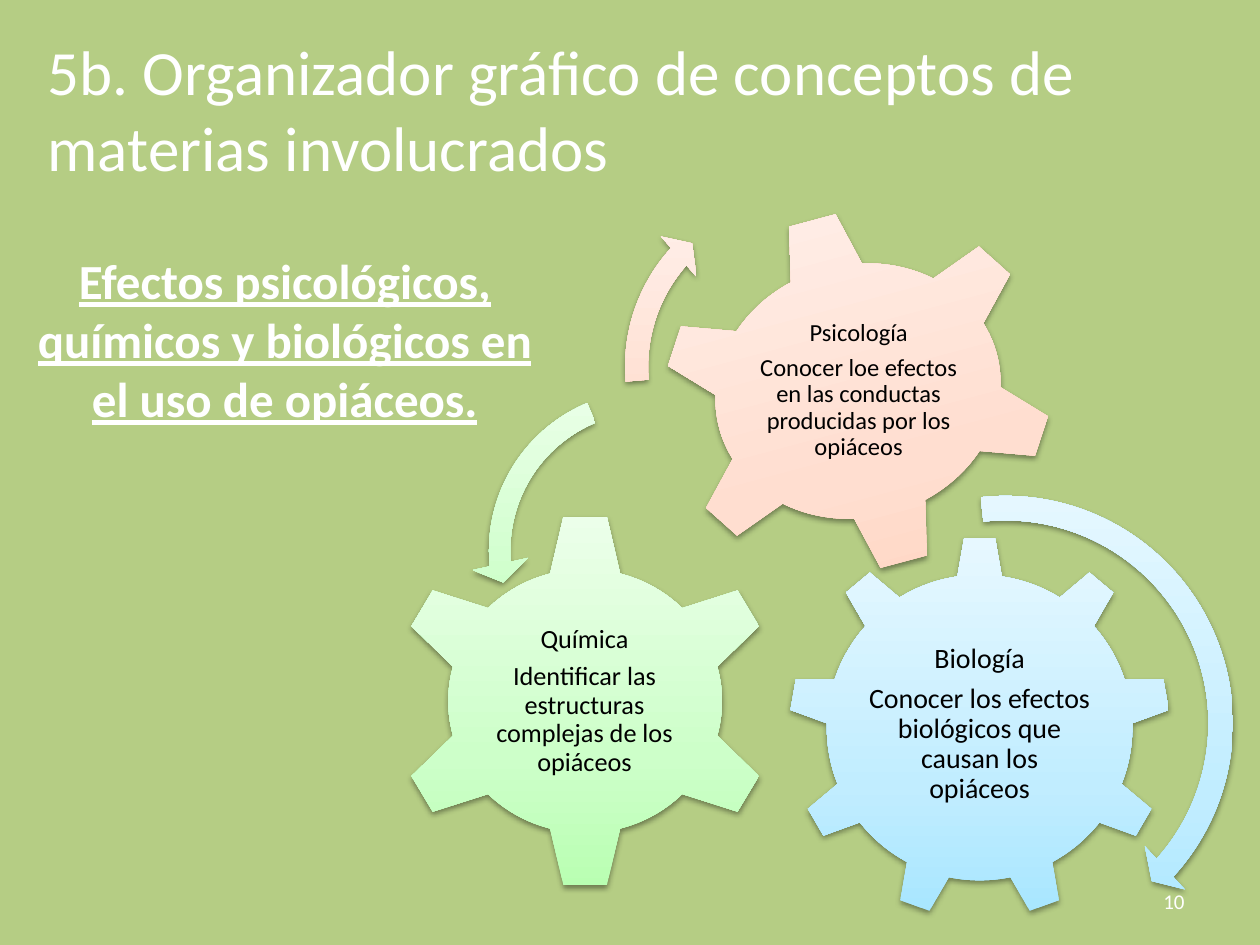
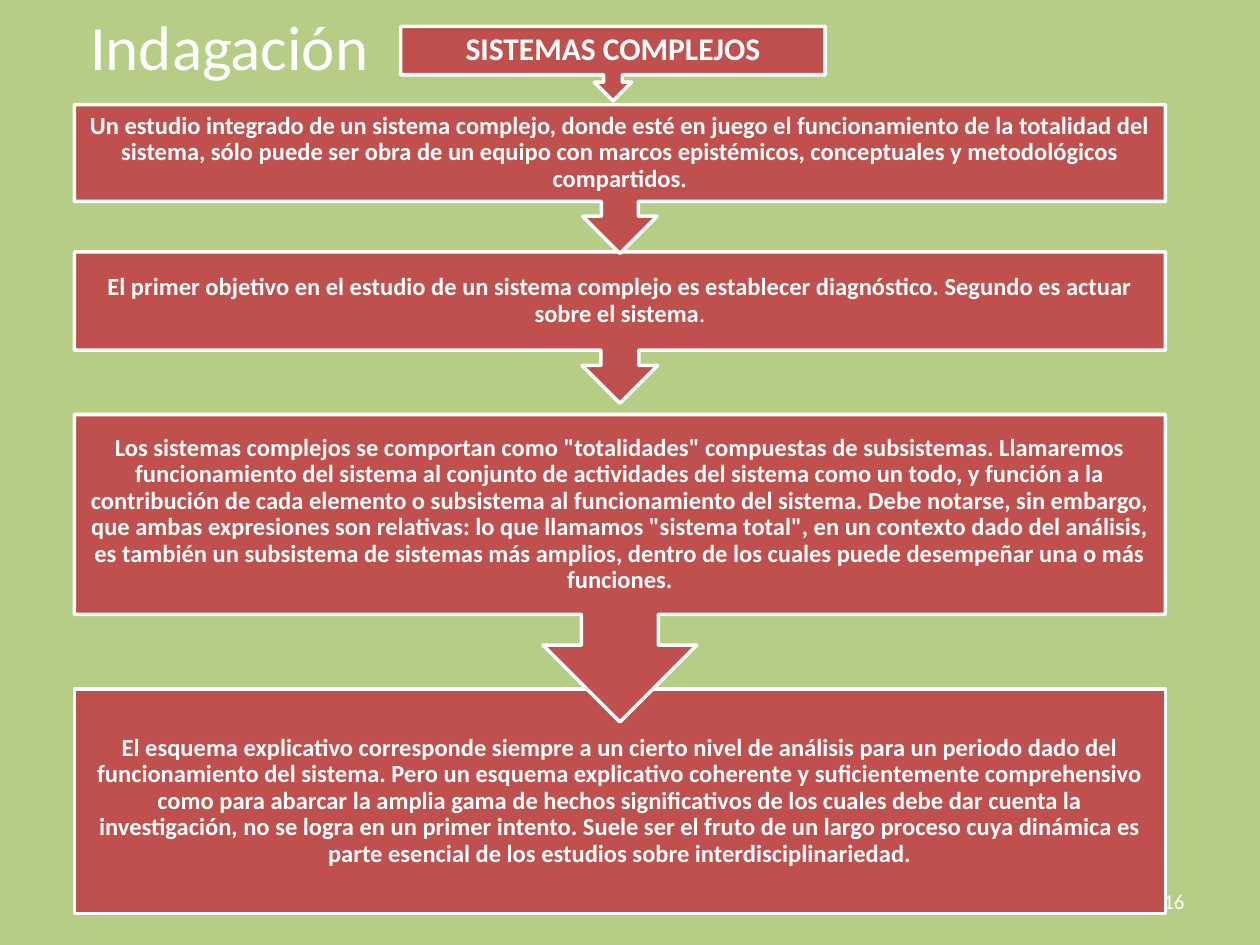
import copy
from dataclasses import dataclass
from typing import NamedTuple

import pptx
import pptx.dml.color
import pptx.enum.shapes
import pptx.enum.text
import pptx.oxml
import pptx.oxml.ns
import pptx.util

Pt = pptx.util.Pt
RGBColor = pptx.dml.color.RGBColor
PRESET = pptx.enum.shapes.MSO_SHAPE
ALIGN = pptx.enum.text.PP_ALIGN
ANCHOR = pptx.enum.text.MSO_ANCHOR

FONT = "Calibri"
WHITE = RGBColor(0xFF, 0xFF, 0xFF)
BLACK = RGBColor(0x00, 0x00, 0x00)
MEADOW = RGBColor(0xB5, 0xCD, 0x84)
BRICK = RGBColor(0xC0, 0x50, 0x4D)
BLUES = (RGBColor(0xA7, 0xE6, 0xFF), RGBColor(0xC1, 0xED, 0xFF), RGBColor(0xE7, 0xF8, 0xFF))
GREENS = (RGBColor(0xB9, 0xFF, 0xB2), RGBColor(0xCD, 0xFF, 0xC9), RGBColor(0xEC, 0xFF, 0xEA))
PEACHES = (RGBColor(0xFF, 0xD2, 0xBD), RGBColor(0xFF, 0xDE, 0xD0), RGBColor(0xFF, 0xF2, 0xED))
STOP_POSITIONS = (0, 0.35, 1)

SHADOW_XML = (
    f'<a:outerShdw {pptx.oxml.ns.nsdecls("a")} blurRad="{Pt(3.15)}" dist="{Pt(1.57)}" '
    'dir="5400000" rotWithShape="0">'
    '<a:srgbClr val="000000"><a:alpha val="38000"/></a:srgbClr></a:outerShdw>'
)


class Box(NamedTuple):
    left: float
    top: float
    width: float
    height: float

    def lengths(self) -> list:
        return [Pt(value) for value in self]


@dataclass(frozen=True)
class TextStyle:
    size: float
    color: RGBColor = WHITE
    bold: bool = False
    underline: bool = False
    align: ALIGN = ALIGN.LEFT
    anchor: ANCHOR = ANCHOR.TOP
    inset: float | None = None
    tight: bool = False


@dataclass(frozen=True)
class Gear:
    subject: str
    goal: str
    preset: PRESET
    box: Box
    text_box: Box
    size: float
    shades: tuple
    rotation: float = 0


@dataclass(frozen=True)
class TurnArrow:
    preset: PRESET
    box: Box
    adjustments: tuple
    shades: tuple


@dataclass(frozen=True)
class Step:
    text: str
    preset: PRESET
    box: Box
    inset: float
    size: float = 14
    plain_ending: str = ""


TITLE = TextStyle(36)
CENTRED_TITLE = TextStyle(36, align=ALIGN.CENTER, anchor=ANCHOR.MIDDLE)
TOPIC = TextStyle(28, bold=True, underline=True, align=ALIGN.CENTER)
PAGE_NUMBER = TextStyle(12, align=ALIGN.RIGHT, anchor=ANCHOR.MIDDLE)
PAGE_NUMBER_BOX = Box(516.2, 500.4, 167.8, 28.8)

GEARS = (
    Gear("Biología", "Conocer los efectos biológicos que causan los opiáceos",
         PRESET.GEAR_9, Box(450.7, 306.7, 218.2, 218.2),
         Box(494.6, 357.8, 130.3, 112.3), 16, BLUES),
    Gear("Química", "Identificar las estructuras complejas de los opiáceos",
         PRESET.GEAR_6, Box(223.9, 293, 221, 215.3),
         Box(278.6, 347.8, 110.9, 105.8), 15, GREENS),
    Gear("Psicología", "Conocer loe efectos en las conductas producidas por los opiáceos",
         PRESET.GEAR_6, Box(377.3, 120.2, 226.1, 206.6),
         Box(428.4, 164.2, 124.6, 118.1), 14, PEACHES, 345),
)

TURN_ARROWS = (
    TurnArrow(PRESET.CIRCULAR_ARROW, Box(434.9, 273.6, 279.4, 279.4),
              (0.05, 2.99, 25.33, 158.25, 0.06), BLUES),
    TurnArrow(PRESET.LEFT_CIRCULAR_ARROW, Box(269.3, 213.1, 203, 203),
              (0.06, 4.3, 104.89, 148.38, 0.08), GREENS),
    TurnArrow(PRESET.CIRCULAR_ARROW, Box(348.5, 100.1, 218.9, 218.9),
              (0.06, 3.94, 133.14, 105.08, 0.07), PEACHES),
)

STEP_LEFT, STEP_WIDTH = 42.5, 623.5


def step_box(top: float, height: float) -> Box:
    return Box(STEP_LEFT, top, STEP_WIDTH, height)


STEPS = (
    Step("El esquema explicativo corresponde siempre a un cierto nivel de análisis para un "
         "periodo dado del funcionamiento del sistema. Pero un esquema explicativo coherente y "
         "suficientemente comprehensivo como para abarcar la amplia gama de hechos "
         "significativos de los cuales debe dar cuenta la investigación, no se logra en un "
         "primer intento. Suele ser el fruto de un largo proceso cuya dinámica es parte "
         "esencial de los estudios sobre interdisciplinariedad.",
         PRESET.RECTANGLE, step_box(393.8, 128.2), 6.2),
    Step("Los sistemas complejos se comportan como \"totalidades\" compuestas de subsistemas. "
         "Llamaremos funcionamiento del sistema al conjunto de actividades del sistema como un "
         "todo, y función a la contribución de cada elemento o subsistema al funcionamiento del "
         "sistema. Debe notarse, sin embargo, que ambas expresiones son relativas: lo que "
         "llamamos \"sistema total\", en un contexto dado del análisis, es también un subsistema "
         "de sistemas más amplios, dentro de los cuales puede desempeñar una o más funciones.",
         PRESET.DOWN_ARROW_CALLOUT, step_box(236.9, 175.7), 7.9),
    Step("El primer objetivo en el estudio de un sistema complejo es establecer diagnóstico. "
         "Segundo es actuar sobre el sistema",
         PRESET.DOWN_ARROW_CALLOUT, step_box(144, 86.4), 6.2, plain_ending="."),
    Step("Un estudio integrado de un sistema complejo, donde esté en juego el funcionamiento de "
         "la totalidad del sistema, sólo puede ser obra de un equipo con marcos epistémicos, "
         "conceptuales y metodológicos compartidos.",
         PRESET.DOWN_ARROW_CALLOUT, step_box(59.8, 85), 7.9),
    Step("SISTEMAS COMPLEJOS",
         PRESET.DOWN_ARROW_CALLOUT, Box(229, 15.1, 242.6, 42.5), 10.1, 18),
)


def add_run(paragraph, text: str, style: TextStyle, bold: bool) -> None:
    run = paragraph.add_run()
    run.text = text
    run.font.name = FONT
    run.font.size = Pt(style.size)
    run.font.bold = bold
    run.font.underline = style.underline
    run.font.color.rgb = style.color


def write(frame, lines: tuple, style: TextStyle, plain_ending: str = "") -> None:
    frame.word_wrap = True
    frame.vertical_anchor = style.anchor
    if style.inset is not None:
        frame.margin_left = frame.margin_right = Pt(style.inset)
        frame.margin_top = frame.margin_bottom = Pt(style.inset)
    for index, line in enumerate(lines):
        paragraph = frame.add_paragraph() if index else frame.paragraphs[0]
        paragraph.alignment = style.align
        if style.tight:
            paragraph.line_spacing = 0.9
            paragraph.space_after = Pt(0.35 * style.size)
        add_run(paragraph, line, style, style.bold)
    if plain_ending:
        add_run(paragraph, plain_ending, style, False)


def add_text(slide, box: Box, lines: tuple, style: TextStyle) -> None:
    write(slide.shapes.add_textbox(*box.lengths()).text_frame, lines, style)


def add_glossy(slide, preset: PRESET, box: Box, shades: tuple):
    shape = slide.shapes.add_shape(preset, *box.lengths())
    shape.line.fill.background()
    shape.fill.gradient()
    shape.fill.gradient_angle = 90
    properties = shape.element.spPr
    stops = properties.find(".//" + pptx.oxml.ns.qn("a:gsLst"))
    stops.append(copy.deepcopy(stops[0]))
    for stop, position, shade in zip(shape.fill.gradient_stops, STOP_POSITIONS, shades):
        stop.position = position
        stop.color.rgb = shade
    shape.shadow.inherit = False
    effects = properties.find(pptx.oxml.ns.qn("a:effectLst"))
    effects.append(pptx.oxml.parse_xml(SHADOW_XML))
    return shape


def add_gear(slide, gear: Gear) -> None:
    add_glossy(slide, gear.preset, gear.box, gear.shades).rotation = gear.rotation
    style = TextStyle(gear.size, BLACK, align=ALIGN.CENTER, anchor=ANCHOR.MIDDLE,
                      inset=1.5, tight=True)
    add_text(slide, gear.text_box, (gear.subject, gear.goal), style)


def add_turn_arrow(slide, arrow: TurnArrow) -> None:
    shape = add_glossy(slide, arrow.preset, arrow.box, arrow.shades)
    for index, value in enumerate(arrow.adjustments):
        shape.adjustments[index] = value


def add_step(slide, step: Step) -> None:
    shape = slide.shapes.add_shape(step.preset, *step.box.lengths())
    shape.shadow.inherit = False
    shape.fill.solid()
    shape.fill.fore_color.rgb = BRICK
    shape.line.color.rgb = WHITE
    shape.line.width = Pt(2)
    style = TextStyle(step.size, bold=True, align=ALIGN.CENTER, anchor=ANCHOR.MIDDLE,
                      inset=step.inset, tight=True)
    write(shape.text_frame, (step.text,), style, step.plain_ending)


def add_slide(deck):
    slide = deck.slides.add_slide(deck.slide_layouts[6])
    slide.background.fill.solid()
    slide.background.fill.fore_color.rgb = MEADOW
    return slide


def build_organizer(deck) -> None:
    slide = add_slide(deck)
    add_text(slide, Box(8.6, 139.7, 308.2, 136.1),
             ("Efectos psicológicos, químicos y biológicos en el uso de opiáceos.",), TOPIC)
    for gear in GEARS:
        add_gear(slide, gear)
    for arrow in TURN_ARROWS:
        add_turn_arrow(slide, arrow)
    add_text(slide, PAGE_NUMBER_BOX, ("10",), PAGE_NUMBER)
    add_text(slide, Box(20.2, 15.1, 686.2, 94.3),
             ("5b. Organizador gráfico de conceptos de", "materias involucrados"), TITLE)


def build_inquiry(deck) -> None:
    slide = add_slide(deck)
    for step in STEPS:
        add_step(slide, step)
    add_text(slide, PAGE_NUMBER_BOX, ("16",), PAGE_NUMBER)
    add_text(slide, Box(10.4, -19.4, 241.2, 90), ("Indagación",), CENTRED_TITLE)


def main() -> None:
    deck = pptx.Presentation()
    deck.slide_width, deck.slide_height = Pt(720), Pt(540)
    build_organizer(deck)
    build_inquiry(deck)
    deck.save("out.pptx")


if __name__ == "__main__":
    main()
